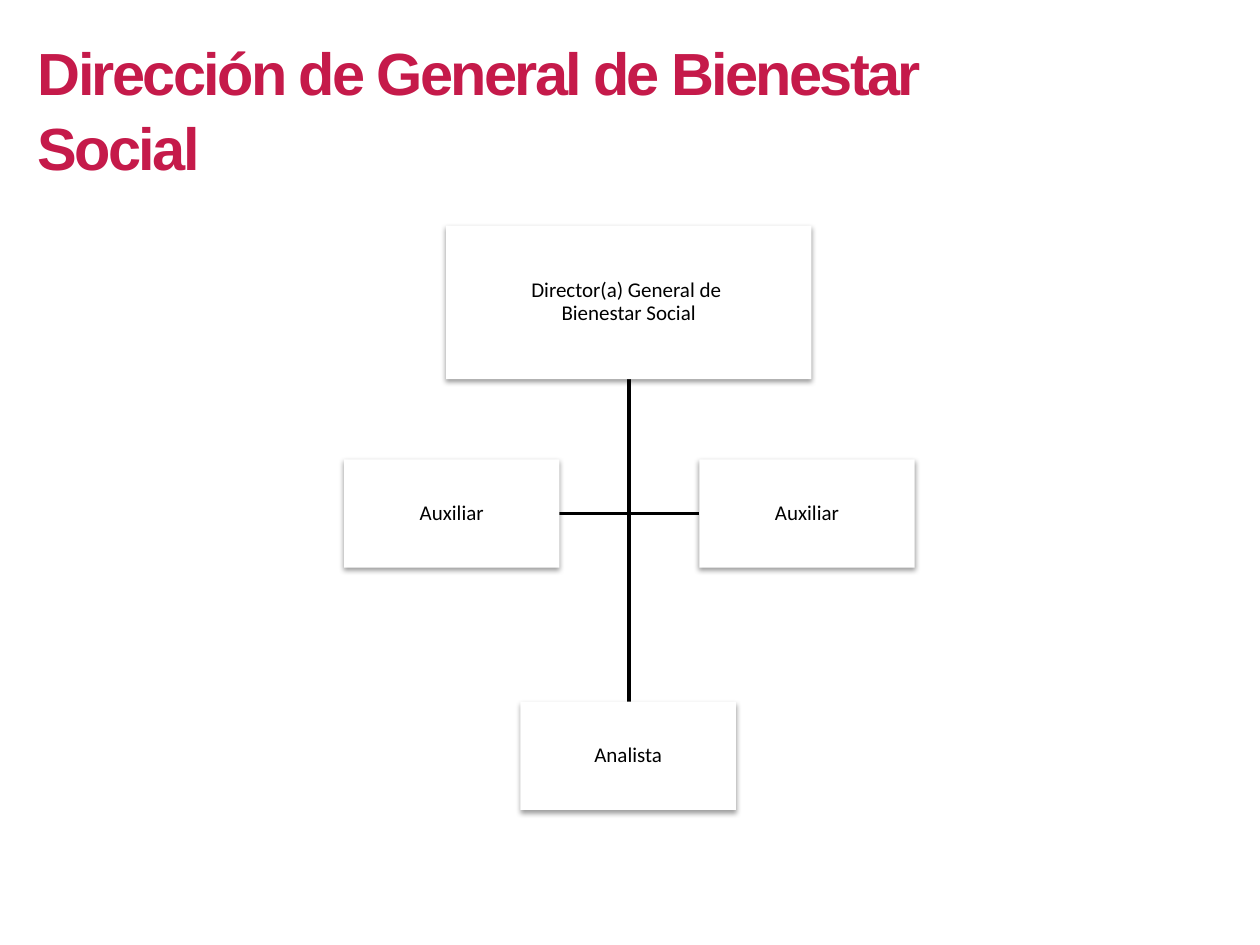
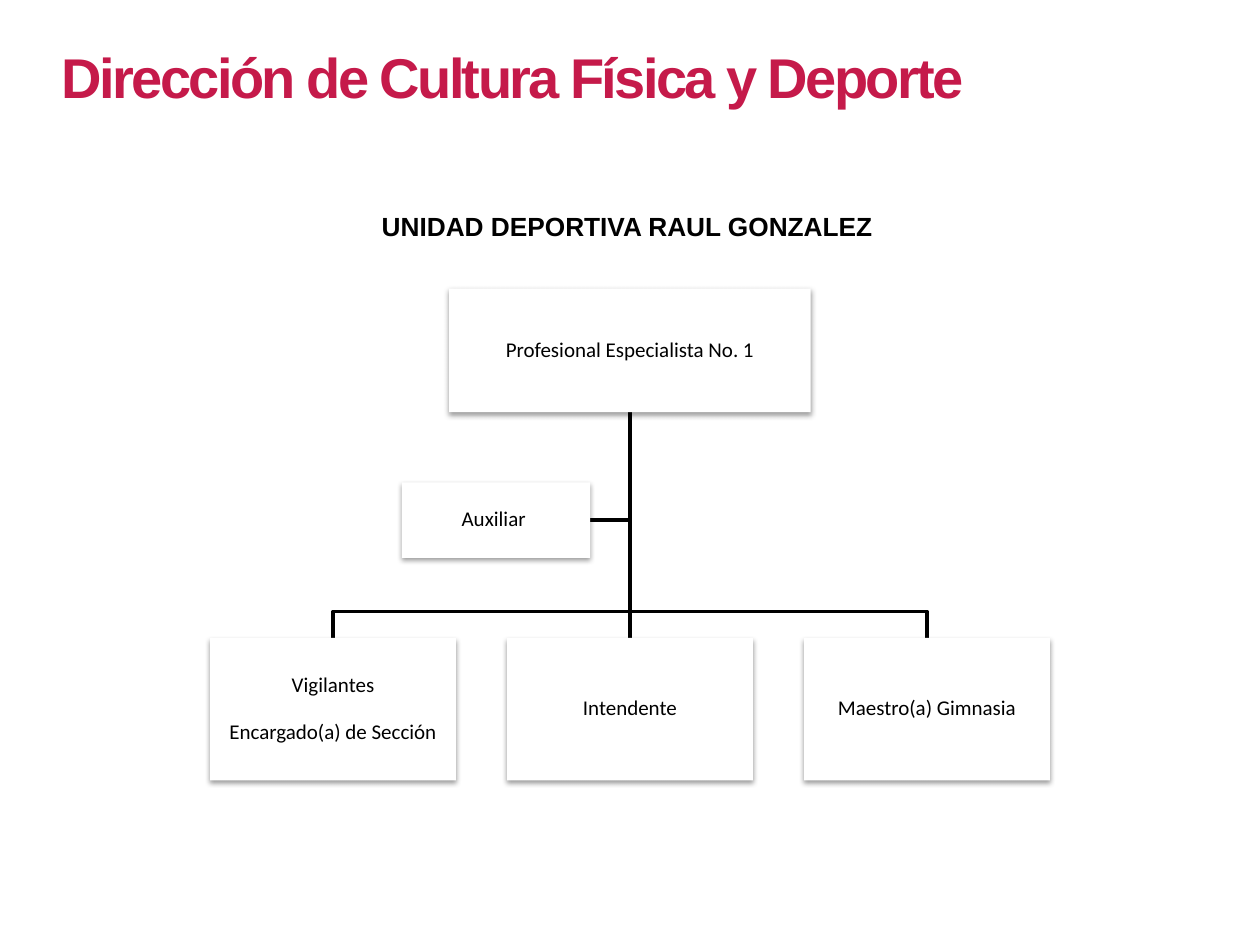
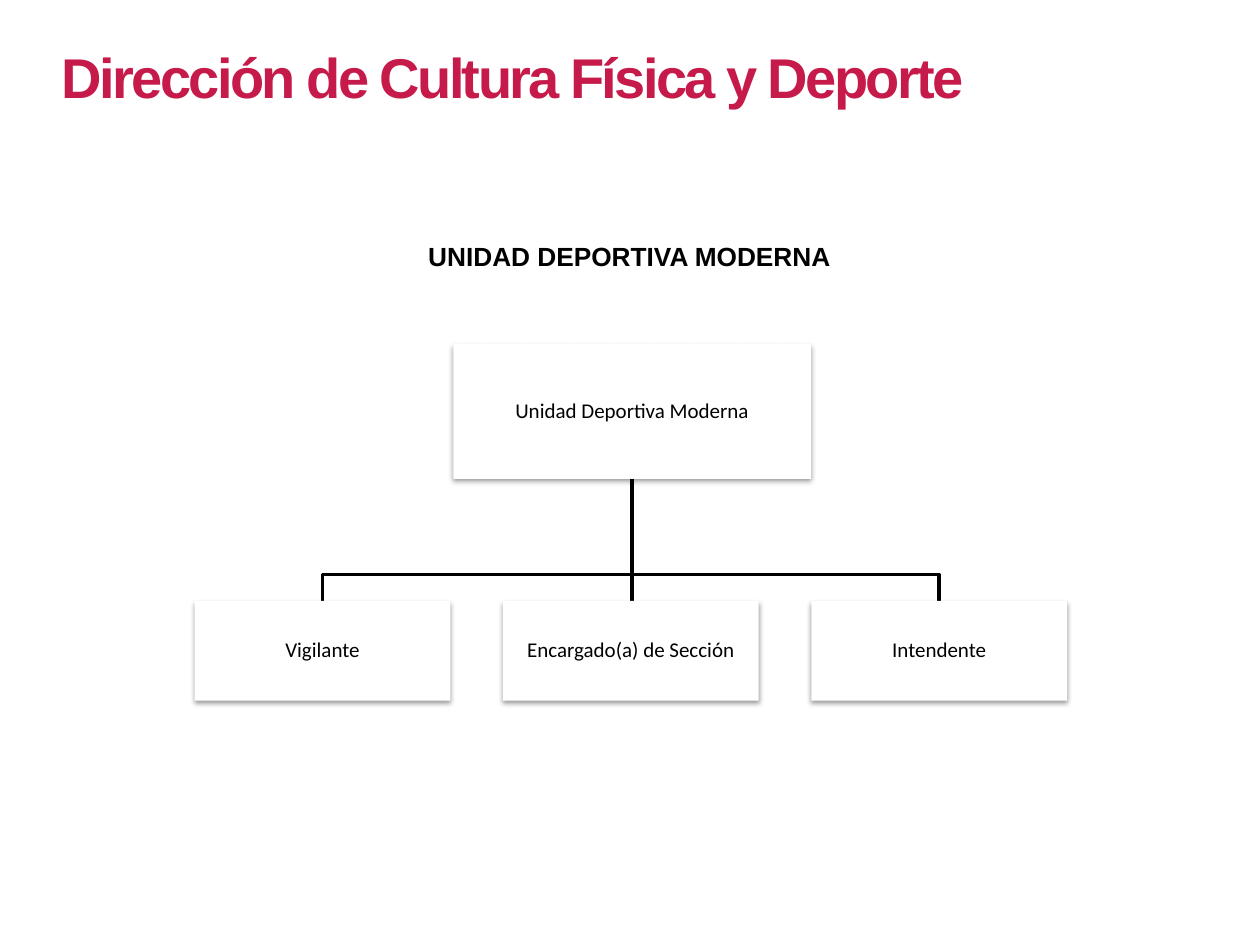
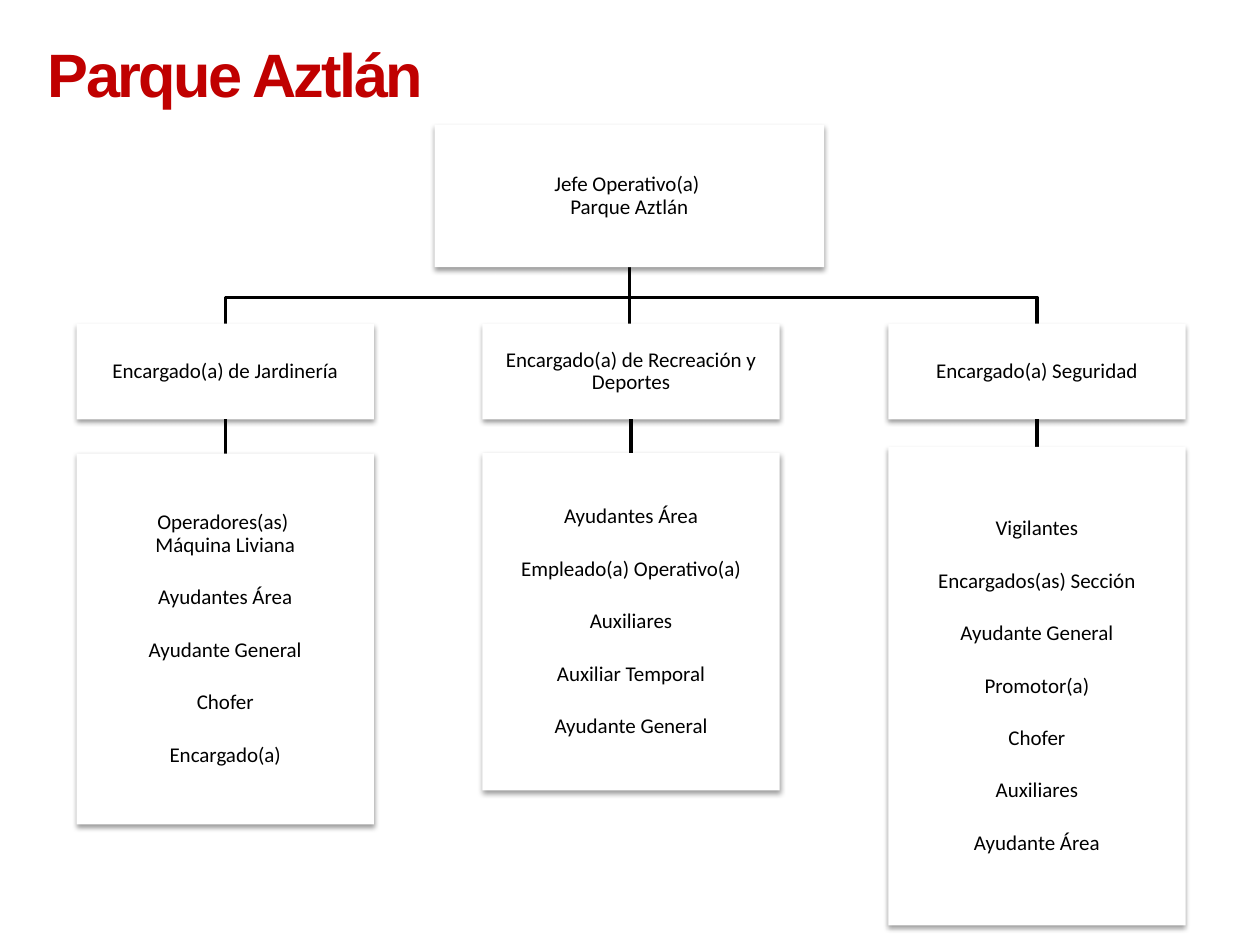
from lxml import etree
from pptx import Presentation
from pptx.dml.color import RGBColor
from pptx.enum.shapes import MSO_CONNECTOR, MSO_SHAPE
from pptx.enum.text import MSO_ANCHOR, MSO_AUTO_SIZE, PP_ALIGN
from pptx.oxml.ns import qn
from pptx.util import Pt

COLORS = {"crimson": "C51A4A", "red": "C00000", "black": "000000", "white": "FFFFFF"}
HEAD_FONT, BOX_FONT = "Arial", "Calibri"
TITLE_ONLY = 5
LINE_WIDTH = 2
BAR_GAP = 15  # from the branching bar down to the row below it
LIST_GAP = 17


def rgb(name):
    return RGBColor.from_string(COLORS[name])


def points(*lengths):
    return [Pt(length) for length in lengths]


def add_run(p, text, size, font, color="black", bold=False):
    r = p.add_run()
    r.text = text
    r.font.size, r.font.name, r.font.bold = Pt(size), font, bold
    r.font.color.rgb = rgb(color)
    return r


def add_effects(sp, shadow=False):
    """Give the shape its own effect list: empty, or with a soft shadow below."""
    effects = etree.SubElement(sp._element.spPr, qn("a:effectLst"))
    if shadow:
        outer = etree.SubElement(effects, qn("a:outerShdw"), blurRad=str(Pt(3.1)),
                                 dist=str(Pt(1.6)), dir="5400000", rotWithShape="0")
        color = etree.SubElement(outer, qn("a:srgbClr"), val=COLORS["black"])
        etree.SubElement(color, qn("a:alpha"), val="38000")


def add_titled_slide(prs, text, box, size, color="crimson"):
    s = prs.slides.add_slide(prs.slide_layouts[TITLE_ONLY])
    title = s.shapes.title
    title.left, title.top, title.width, title.height = points(*box)
    tf = title.text_frame
    tf.word_wrap, tf.auto_size = True, MSO_AUTO_SIZE.NONE
    tf.vertical_anchor = MSO_ANCHOR.TOP
    p = tf.paragraphs[0]
    p.alignment, p.line_spacing = PP_ALIGN.LEFT, 1.05
    r = add_run(p, text, size, HEAD_FONT, color, bold=True)
    r.font._element.set("spc", "-150")
    return s


def add_subtitle(s, text, box):
    tf = s.shapes.add_textbox(*points(*box)).text_frame
    tf.word_wrap = False
    add_run(tf.paragraphs[0], text, 15, HEAD_FONT, bold=True)


def add_post(s, box, *entries, gap=LIST_GAP):
    """Draw a white card with one centred paragraph for each entry."""
    sp = s.shapes.add_shape(MSO_SHAPE.RECTANGLE, *points(*box))
    sp.fill.solid()
    sp.fill.fore_color.rgb = rgb("white")
    sp.line.fill.background()
    add_effects(sp, shadow=True)
    tf = sp.text_frame
    tf.word_wrap, tf.vertical_anchor = True, MSO_ANCHOR.MIDDLE
    tf.margin_left = tf.margin_right = tf.margin_top = tf.margin_bottom = Pt(0.7)
    for i, entry in enumerate(entries):
        p = tf.add_paragraph() if i else tf.paragraphs[0]
        p.alignment, p.line_spacing = PP_ALIGN.CENTER, 0.9
        if i:
            p.space_before = Pt(gap)
        for j, line in enumerate(entry.split("\n")):
            if j:
                p.add_line_break()
            add_run(p, line, 12, BOX_FONT)


def style_line(sp):
    sp.line.color.rgb = rgb("black")
    sp.line.width = Pt(LINE_WIDTH)
    add_effects(sp)


def add_line(s, x1, y1, x2, y2):
    style_line(s.shapes.add_connector(MSO_CONNECTOR.STRAIGHT, *points(x1, y1, x2, y2)))


def add_bent_line(s, start, *corners):
    builder = s.shapes.build_freeform(*points(*start))
    builder.add_line_segments([points(*corner) for corner in corners], close=False)
    sp = builder.convert_to_shape()
    sp.fill.background()
    style_line(sp)


def bottom_center(box):
    x, y, w, h = box
    return x + w / 2, y + h


def row_boxes(first, pitch, count=3):
    x, y, w, h = first
    return [(x + i * pitch, y, w, h) for i in range(count)]


def add_branches(s, head, boxes):
    """Join the head box to a row of three boxes, straight down to the middle one."""
    x, y = bottom_center(head)
    row_top = boxes[0][1]
    bar = row_top - BAR_GAP
    for box in (boxes[0], boxes[-1]):
        end = bottom_center(box)[0]
        add_bent_line(s, (x, y), (x, bar), (end, bar), (end, row_top))
    add_line(s, x, y, x, row_top)


def add_chart_with_row(s, head, head_text, first, pitch, row):
    """Draw a head post over a row of posts; each row item is a tuple of entries."""
    boxes = row_boxes(first, pitch, len(row))
    add_branches(s, head, boxes)
    add_post(s, head, head_text)
    for box, entries in zip(boxes, row):
        add_post(s, box, *entries, gap=14)
    return boxes


def build_welfare(prs):
    s = add_titled_slide(prs, "Dirección de General de Bienestar Social",
                         (14.4, 15.1, 562.3, 90), 34)
    director = (254.9, 128.9, 208.8, 87.8)
    analyst = (297.4, 401, 123.1, 61.9)
    aides = row_boxes((196.6, 262.5, 123.1, 61.9), 203, 2)
    x, y = bottom_center(director)
    left, top, width, height = aides[0]
    middle = top + height / 2
    add_line(s, left + width, middle, aides[1][0], middle)
    add_line(s, x, y, x, analyst[1])
    add_post(s, director, "Director(a) General de \nBienestar Social")
    add_post(s, analyst, "Analista")
    for box in aides:
        add_post(s, box, "Auxiliar")


def add_sports_slide(prs):
    return add_titled_slide(prs, "Dirección de Cultura Física y Deporte",
                            (28.1, 18.7, 553.7, 46.1), 32)


def build_gonzalez_unit(prs):
    s = add_sports_slide(prs)
    add_subtitle(s, "UNIDAD DEPORTIVA RAUL GONZALEZ", (211, 116.6, 298, 25.2))
    head, aide = (256.7, 164.9, 206.6, 70.6), (229.7, 275.6, 107.6, 43.2)
    add_chart_with_row(s, head, "Profesional Especialista No. 1",
                       (120.1, 364.5, 140.4, 81.4), 169.7,
                       [("Vigilantes", "Encargado(a) de Sección"),
                        ("Intendente",), ("Maestro(a) Gimnasia",)])
    x, y, w, h = aide
    add_line(s, x + w, y + h / 2, bottom_center(head)[0], y + h / 2)
    add_post(s, aide, "Auxiliar ")


def build_moderna_unit(prs):
    s = add_sports_slide(prs)
    add_subtitle(s, "UNIDAD DEPORTIVA MODERNA", (237.6, 133.9, 247, 25.2))
    add_chart_with_row(s, (259, 196.4, 204.4, 77.2), "Unidad Deportiva Moderna",
                       (111.2, 343.4, 146.2, 57), 176.2,
                       [("Vigilante",), ("Encargado(a) de Sección",), ("Intendente",)])


def build_park(prs):
    s = add_titled_slide(prs, "Parque Aztlán", (20.2, 15.1, 254.9, 49.7), 35, "red")
    boxes = add_chart_with_row(
        s, (248.4, 71.3, 222.5, 81.4), "Jefe Operativo(a) \nParque Aztlán",
        (43.8, 185, 169.9, 54.7), 231.9,
        [("Encargado(a) de Jardinería",), ("Encargado(a) de Recreación y Deportes",),
         ("Encargado(a) Seguridad",)])
    teams = [
        (259.2, 211.9, ["Operadores(as) \nMáquina Liviana", "Ayudantes Área",
                        "Ayudante General", "Chofer", "Encargado(a)"]),
        (259, 192.7, ["Ayudantes Área", "Empleado(a) Operativo(a)", "Auxiliares",
                      "Auxiliar Temporal", "Ayudante General"]),
        (255.4, 273.4, ["Vigilantes", "Encargados(as) Sección", "Ayudante General",
                        "Promotor(a)", "Chofer", "Auxiliares", "Ayudante Área"]),
    ]
    for box, (top, height, posts) in zip(boxes, teams):
        x, y = bottom_center(box)
        add_line(s, x, y, x, top)
        add_post(s, (box[0], top, box[2], height), *posts)


def main():
    prs = Presentation()
    prs.slide_width, prs.slide_height = points(720, 540)
    for build in (build_welfare, build_gonzalez_unit, build_moderna_unit, build_park):
        build(prs)
    prs.save("out.pptx")


if __name__ == "__main__":
    main()
